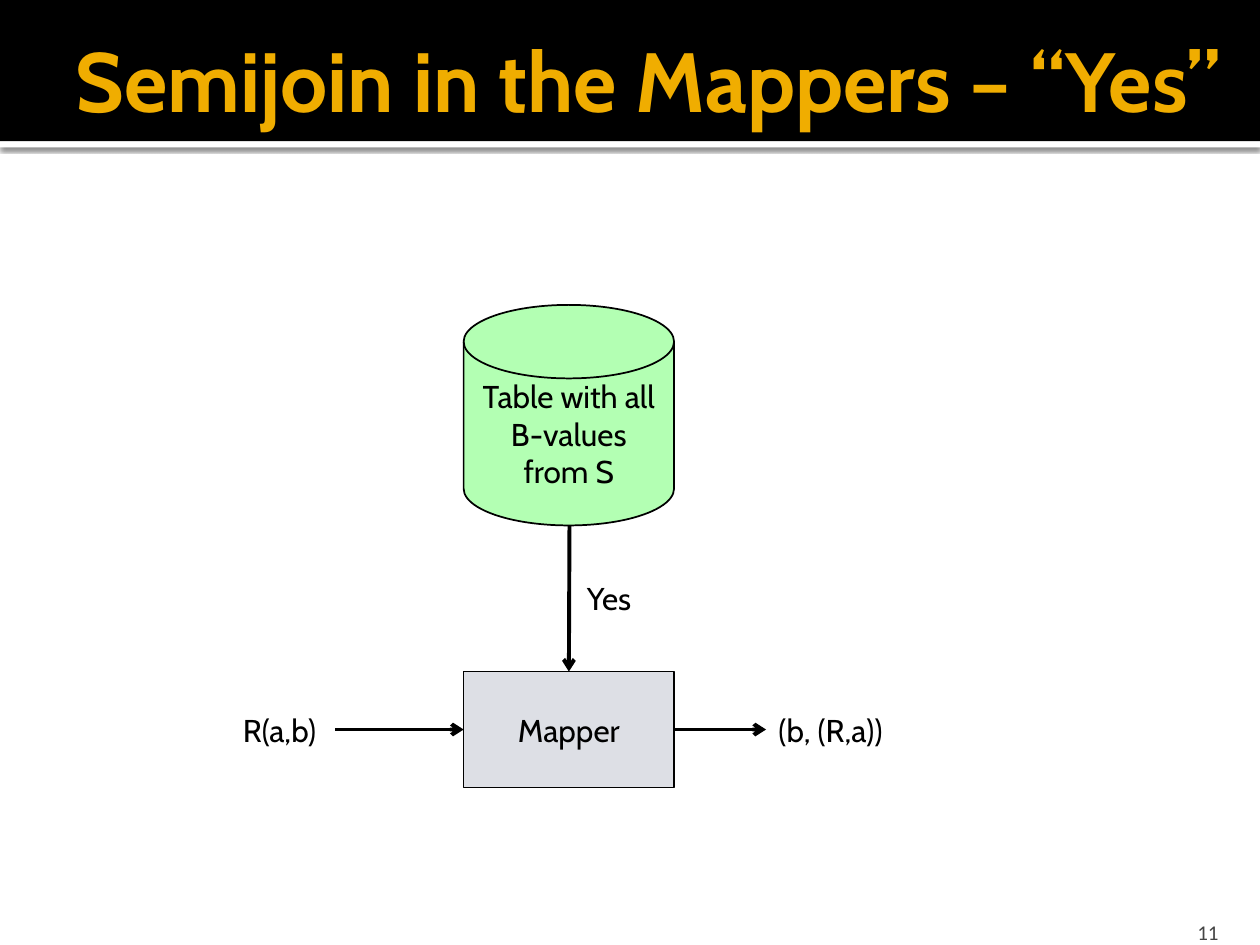
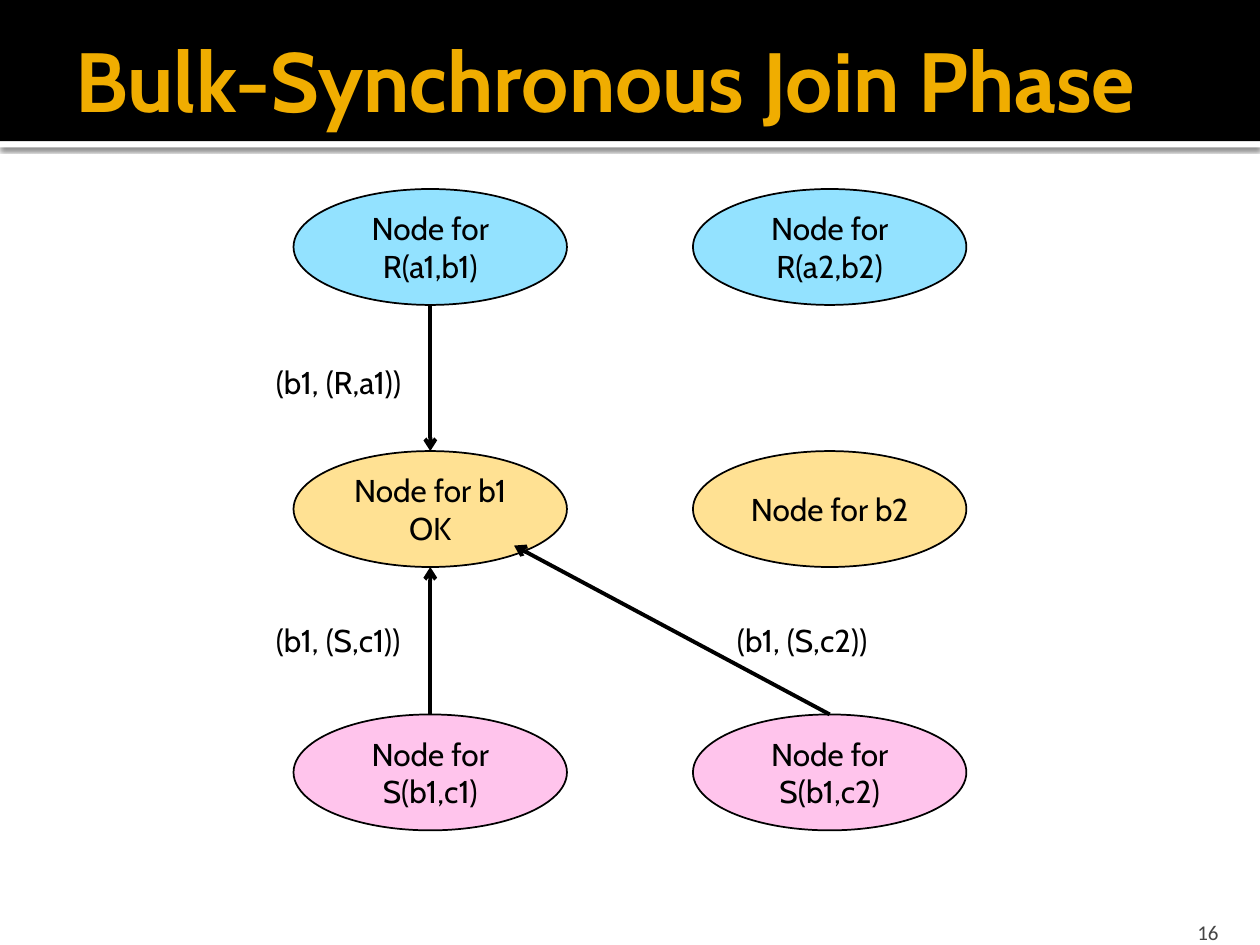
from lxml.etree import SubElement
from pptx import Presentation
from pptx.dml.color import RGBColor
from pptx.enum.shapes import MSO_CONNECTOR, MSO_SHAPE
from pptx.enum.text import MSO_ANCHOR, MSO_AUTO_SIZE, PP_ALIGN
from pptx.oxml import parse_xml
from pptx.oxml.ns import nsdecls, qn
from pptx.util import Inches, Pt

COLORS = {
    "black": "000000", "white": "FFFFFF", "gold": "F0AD00", "gray": "454545",
    "steel": "DDDFE5", "green": "B3FFB3", "sand": "FFE193", "blue": "93E2FF",
    "pink": "FFC4EC",
}
SHADOW = f"""<a:effectLst {nsdecls('a')}>
  <a:outerShdw blurRad="{Pt(2.5)}" dist="{Pt(0.8)}" dir="5400000" rotWithShape="0">
    <a:srgbClr val="{COLORS['black']}"><a:alpha val="60000"/></a:srgbClr>
  </a:outerShdw>
</a:effectLst>"""


def color(name):
    return RGBColor.from_string(COLORS[name])


def box(*lengths):
    return [Inches(n) for n in lengths]


class Deck:
    """Holds the shared style and the slide being filled."""

    def __init__(self):
        self.prs = Presentation()
        self.prs.slide_width, self.prs.slide_height = box(10, 7.5)
        self.slide = None

    def start(self, title, number):
        """Add a slide with its bands, title and number."""
        self.slide = self.prs.slides.add_slide(self.prs.slide_layouts[5])
        stripe = self.shape(MSO_SHAPE.RECTANGLE, (0, 1.12, 10, 0.05), "white")
        props = stripe.element.spPr
        props.remove(props.find(qn("a:effectLst")))
        props.append(parse_xml(SHADOW))
        self.shape(MSO_SHAPE.RECTANGLE, (0, 0, 10, 1.12), "black")

        head = self.slide.shapes.title
        head.element.getparent().append(head.element)  # in front of the bands
        head.left, head.top, head.width, head.height = box(0.5, 0.17, 9.5, 0.92)
        frame = head.text_frame
        frame.margin_right = Inches(0.05)
        frame.auto_size = MSO_AUTO_SIZE.NONE
        frame.vertical_anchor = MSO_ANCHOR.MIDDLE
        self.text(frame, title, 48, "gold", PP_ALIGN.LEFT, bold=True)

        frame = self.slide.shapes.add_textbox(*box(8.97, 7.2, 0.8, 0.3)).text_frame
        frame.word_wrap = True
        frame.margin_bottom = 0
        frame.vertical_anchor = MSO_ANCHOR.BOTTOM
        self.text(frame, number, 12, "gray", PP_ALIGN.RIGHT, font="Calibri")

    def text(self, frame, words, size=18, ink="black", align=PP_ALIGN.LEFT,
             font="Cabin", bold=False):
        frame.text = words
        for par in frame.paragraphs:
            par.alignment = align
            for run in par.runs:
                run.font.name = font
                run.font.size = Pt(size)
                run.font.bold = bold
                run.font.color.rgb = color(ink)

    def shape(self, kind, place, fill):
        shape = self.slide.shapes.add_shape(kind, *box(*place))
        shape.shadow.inherit = False
        shape.fill.solid()
        shape.fill.fore_color.rgb = color(fill)
        shape.line.fill.background()
        return shape

    def node(self, kind, place, fill, words):
        """Add an outlined shape with centred text."""
        node = self.shape(kind, place, fill)
        node.line.color.rgb = color("black")
        node.line.width = Pt(1)
        node.text_frame.word_wrap = True
        node.text_frame.vertical_anchor = MSO_ANCHOR.MIDDLE
        self.text(node.text_frame, words, align=PP_ALIGN.CENTER)
        return node

    def label(self, left, top, width, words):
        frame = self.slide.shapes.add_textbox(*box(left, top, width, 0.4)).text_frame
        frame.word_wrap = False
        frame.auto_size = MSO_AUTO_SIZE.SHAPE_TO_FIT_TEXT
        self.text(frame, words)

    def arrow(self, start, end):
        arrow = self.slide.shapes.add_connector(
            MSO_CONNECTOR.STRAIGHT, *box(*start, *end))
        arrow.line.color.rgb = color("black")
        arrow.line.width = Pt(2.25)
        props = arrow.element.spPr
        SubElement(props.find(qn("a:ln")), qn("a:tailEnd"), type="arrow")
        SubElement(props, qn("a:effectLst"))
        return arrow


def draw_mapper(deck):
    deck.start("Semijoin in the Mappers – “Yes”", "11")
    left, wide, mid, row = 3.68, 1.67, 4.52, 5.79
    mapper = deck.node(MSO_SHAPE.RECTANGLE, (left, 5.33, wide, 0.92),
                       "steel", "Mapper")
    deck.node(MSO_SHAPE.FLOWCHART_MAGNETIC_DISK, (left, 2.42, wide, 1.75),
              "green", "Table with all B-values from S")
    deck.arrow((2.66, row), (left, row)).end_connect(mapper, 1)
    deck.arrow((mid, 4.17), (mid, 5.33)).end_connect(mapper, 0)
    deck.arrow((left + wide, row), (6.08, row)).begin_connect(mapper, 3)
    deck.label(1.83, 5.59, 0.82, "R(a,b)")
    deck.label(4.56, 4.55, 0.56, "Yes")
    deck.label(6.08, 5.59, 1.1, "(b, (R,a))")


def draw_join(deck):
    deck.start("Bulk-Synchronous Join Phase", "16")
    wide, high = 2.17, 0.92
    lefts, tops = (2.33, 5.5), (1.5, 3.58, 5.67)
    rows = [
        ("blue", "Node for R(a1,b1)", "Node for R(a2,b2)"),
        ("sand", "Node for b1\nOK", "Node for b2"),
        ("pink", "Node for S(b1,c1)", "Node for S(b1,c2)"),
    ]
    for top, (fill, *names) in zip(tops, rows):
        for left, name in zip(lefts, names):
            deck.node(MSO_SHAPE.OVAL, (left, top, wide, high), fill, name)

    first, second = (left + wide / 2 for left in lefts)
    deck.arrow((first, tops[0] + high), (first, tops[1]))
    deck.arrow((first, tops[2]), (first, tops[1] + high))
    deck.arrow((second, tops[2]), (4.08, 4.33))
    deck.label(2.09, 2.83, 1.32, "(b1, (R,a1))")
    deck.label(2.09, 4.88, 1.32, "(b1, (S,c1))")
    deck.label(5.75, 4.88, 1.31, "(b1, (S,c2))")


def main():
    deck = Deck()
    draw_mapper(deck)
    draw_join(deck)
    deck.prs.save("out.pptx")


if __name__ == "__main__":
    main()
